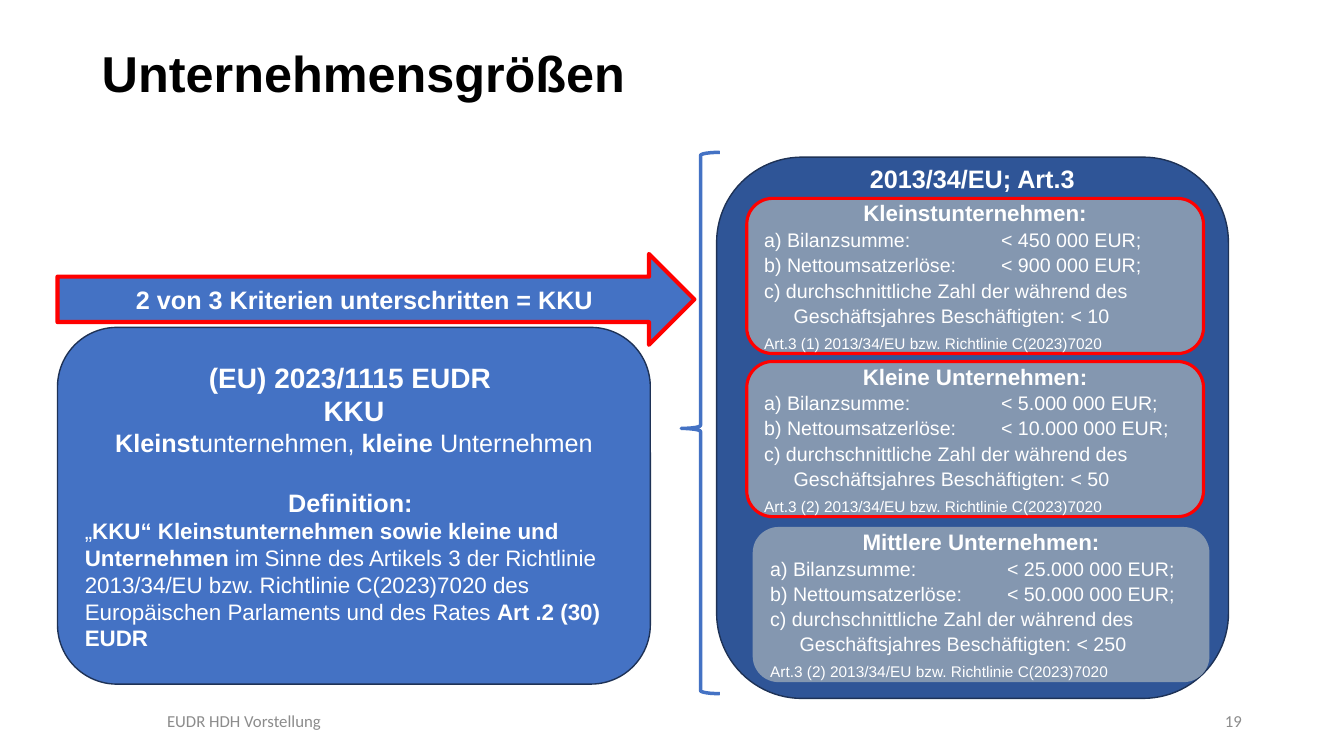
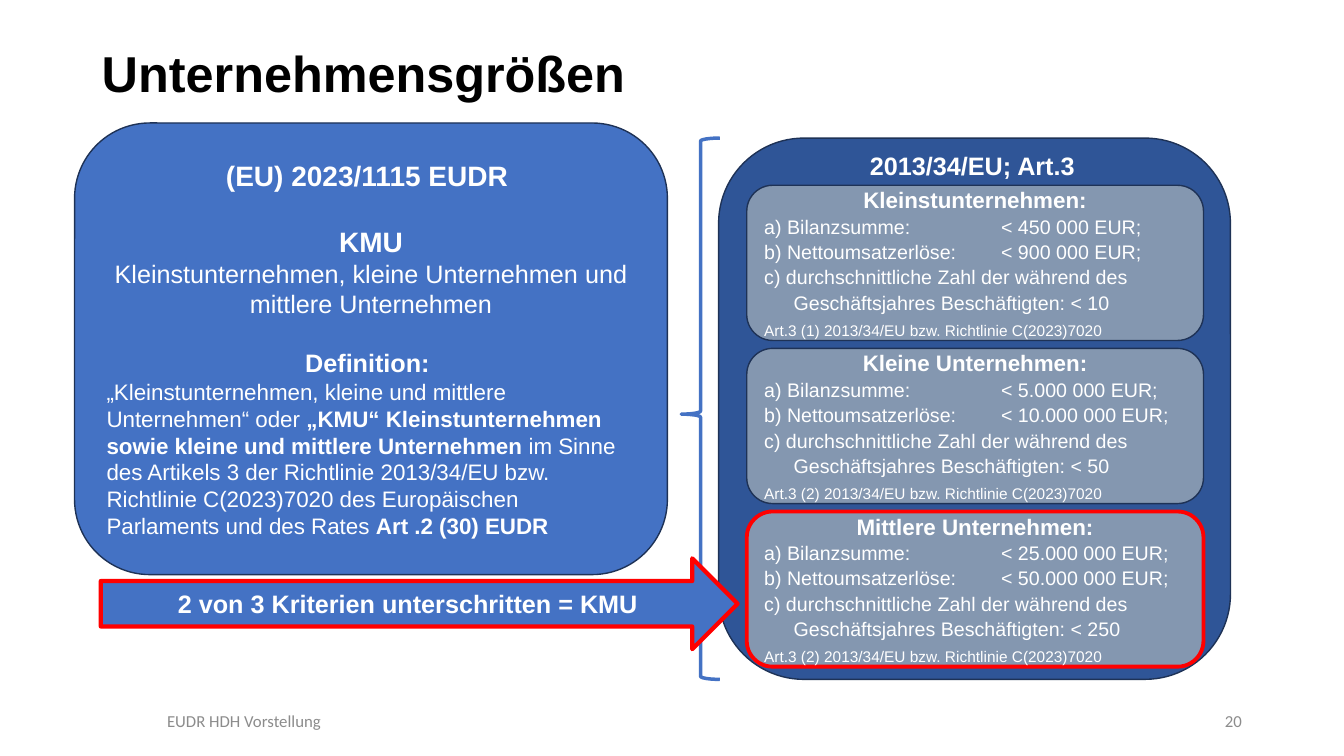
from dataclasses import dataclass

from lxml.etree import SubElement
from pptx import Presentation
from pptx.dml.color import RGBColor as Rgb
from pptx.enum.shapes import MSO_SHAPE as Preset
from pptx.enum.text import MSO_ANCHOR as Anchor, MSO_AUTO_SIZE as AutoSize, PP_ALIGN as Align
from pptx.oxml.ns import qn
from pptx.util import Cm, Pt


@dataclass(frozen=True)
class Theme:
    """Colours, fonts and type sizes of the presentation."""
    black: str = "000000"
    white: str = "FFFFFF"
    grey: str = "8C8C8C"
    blue: str = "4472C4"
    navy: str = "2F5597"
    outline: str = "1E3256"
    card: str = "8497B0"
    red: str = "FF0000"
    font: str = "Arial"
    footer_font: str = "Calibri"
    title: int = 36
    headline: int = 20
    lead: int = 18
    body: int = 16
    criteria: int = 14
    source: int = 11
    footer: int = 12


@dataclass(frozen=True)
class Box:
    """A rectangle in centimetres."""
    left: float
    top: float
    width: float
    height: float

    def shifted(self, right, down):
        """Return the same rectangle moved right and down."""
        return Box(self.left + right, self.top + down, self.width, self.height)

    def lengths(self):
        """Return left, top, width and height as lengths."""
        return [Cm(value) for value in (self.left, self.top, self.width, self.height)]


@dataclass(frozen=True)
class Edge:
    """Colour and width of an outline."""
    color: str
    width: float


THEME = Theme()
THIN = Edge(THEME.outline, 1)
TITLE_BOX = Box(2.31, 0.91, 29.21, 2.01)
FOOTER_BOX = Box(2.34, 17.65, 7.62, 1.02)
NUMBER_BOX = Box(28.12, 17.65, 3.43, 1.02)
CARD_PITCH = 4.11
TAB_STOP = Cm(5.97)
HANGING = Cm(0.74)

SIZE_CLASSES = [
    ("Kleinstunternehmen:", "450 000", "900 000", "10", "1"),
    ("Kleine Unternehmen:", "5.000 000", "10.000 000", "50", "2"),
    ("Mittlere Unternehmen:", "25.000 000", "50.000 000", "250", "2"),
]


def add_paragraph(frame, runs, align=Align.LEFT, before=0, color=THEME.white, font=THEME.font):
    """Add a paragraph made of (text, size, bold) runs."""
    paragraph = frame.paragraphs[0]
    if paragraph.runs:
        paragraph = frame.add_paragraph()
    paragraph.alignment = align
    paragraph.space_before = Pt(before)
    for text, size, bold in runs:
        run = paragraph.add_run()
        run.text = text
        run.font.name = font
        run.font.size = Pt(size)
        run.font.bold = bold
        run.font.color.rgb = Rgb.from_string(color)
    return paragraph


def add_preset(slide, preset, box, fill=None, edge=None):
    """Add a flat preset shape and return it."""
    shape = slide.shapes.add_shape(preset, *box.lengths())
    shape.shadow.inherit = False
    if fill:
        shape.fill.solid()
        shape.fill.fore_color.rgb = Rgb.from_string(fill)
    else:
        shape.fill.background()
    if edge:
        shape.line.color.rgb = Rgb.from_string(edge.color)
        shape.line.width = Pt(edge.width)
    else:
        shape.line.fill.background()
    shape.text_frame.word_wrap = True
    shape.text_frame.vertical_anchor = Anchor.MIDDLE
    return shape


def add_label(slide, box, text, size, bold=False, anchor=Anchor.MIDDLE, **style):
    """Add a text box with one line of text."""
    frame = slide.shapes.add_textbox(*box.lengths()).text_frame
    frame.word_wrap = True
    frame.vertical_anchor = anchor
    add_paragraph(frame, [(text, size, bold)], **style)


def add_frame(slide, number):
    """Fill the title and add the footer and the slide number."""
    title = slide.shapes.title
    title.left, title.top, title.width, title.height = TITLE_BOX.lengths()
    title.text_frame.auto_size = AutoSize.NONE
    title.text_frame.vertical_anchor = Anchor.MIDDLE
    heading = add_paragraph(title.text_frame, [("Unternehmensgrößen", THEME.title, True)],
                            color=THEME.black)
    heading.line_spacing = 0.9
    footer_style = {"color": THEME.grey, "font": THEME.footer_font}
    add_label(slide, FOOTER_BOX, "EUDR HDH Vorstellung", THEME.footer,
              align=Align.CENTER, **footer_style)
    add_label(slide, NUMBER_BOX, str(number), THEME.footer, align=Align.RIGHT, **footer_style)


def add_card(slide, box, size_class, edge):
    """Add one company size with its three criteria and its source."""
    name, balance, revenue, staff, section = size_class
    frame = add_preset(slide, Preset.ROUNDED_RECTANGLE, box, THEME.card, edge).text_frame
    add_paragraph(frame, [(name, THEME.body, True)], Align.CENTER)
    for criterion, limit in (("a) Bilanzsumme:", balance), ("b) Nettoumsatzerlöse:", revenue)):
        text = f"{criterion} \t< {limit} EUR;"
        paragraph = add_paragraph(frame, [(text, THEME.criteria, False)])
        paragraph.line_spacing = Pt(18)
        tabs = SubElement(paragraph._p.get_or_add_pPr(), qn("a:tabLst"))
        SubElement(tabs, qn("a:tab"), pos=str(TAB_STOP), algn="l")
    employees = ("c) durchschnittliche Zahl der während des "
                 f"Geschäftsjahres Beschäftigten: < {staff}")
    source = f"Art.3 ({section}) 2013/34/EU bzw. Richtlinie C(2023)7020"
    for text, size in ((employees, THEME.criteria), (source, THEME.source)):
        paragraph = add_paragraph(frame, [(text, size, False)])
        paragraph.line_spacing = Pt(18)
        properties = paragraph._p.get_or_add_pPr()
        properties.set("marL", str(HANGING))
        properties.set("indent", str(-HANGING))


def add_directive(slide, box, first_card, edges, last_shift=(0, 0)):
    """Add the directive panel with its heading and three stacked cards."""
    add_preset(slide, Preset.ROUNDED_RECTANGLE, box, THEME.navy, THIN)
    heading_box = Box(first_card.left + 2.85, first_card.top - 1.01, 5.82, 1.02)
    add_label(slide, heading_box, "2013/34/EU; Art.3", THEME.lead, True, Anchor.TOP)
    shifts = [(0, 0), (0, 0), last_shift]
    for index, (size_class, edge, (right, down)) in enumerate(zip(SIZE_CLASSES, edges, shifts)):
        card_box = first_card.shifted(right, index * CARD_PITCH + down)
        add_card(slide, card_box, size_class, edge)


def add_brace(slide, box):
    """Add the brace that opens towards the directive panel."""
    brace = add_preset(slide, Preset.LEFT_BRACE, box, edge=Edge(THEME.blue, 2.5))
    brace.adjustments[0] = 0.08
    brace.adjustments[1] = 0.51


def add_definition(slide, box, term, members, definition, term_gap=0):
    """Add the panel that defines a term of the regulation."""
    frame = add_preset(slide, Preset.ROUNDED_RECTANGLE, box, THEME.blue, THIN).text_frame
    add_paragraph(frame, [("(EU) 2023/1115 EUDR ", THEME.headline, True)], Align.CENTER)
    add_paragraph(frame, [(term, THEME.headline, True)], Align.CENTER, term_gap)
    add_paragraph(frame, [(text, THEME.lead, bold) for text, bold in members], Align.CENTER)
    add_paragraph(frame, [("Definition: ", THEME.lead, True)], Align.CENTER, 21)
    reference = [
        ("im Sinne des Artikels 3 der Richtlinie 2013/34/EU bzw. Richtlinie C(2023)7020 "
         "des Europäischen Parlaments und des Rates ", False),
        ("Art .2 (30) EUDR", True),
    ]
    add_paragraph(frame, [(text, THEME.body, bold) for text, bold in definition + reference])


def add_criteria_arrow(slide, box, term):
    """Add the arrow that states the rule for a term."""
    arrow = add_preset(slide, Preset.RIGHT_ARROW, box, THEME.blue, Edge(THEME.red, 3))
    text = f"2 von 3 Kriterien unterschritten = {term}"
    add_paragraph(arrow.text_frame, [(text, THEME.lead, True)], Align.CENTER)


def build_small_companies(slide):
    """Build the slide on micro and small companies."""
    add_frame(slide, 19)
    add_definition(
        slide, Box(1.45, 8.25, 14.94, 8.99), "KKU",
        [("Kleinst", True), ("unternehmen, ", False), ("kleine", True), (" Unternehmen", False)],
        [("„", False), ("KKU“ Kleinstunternehmen sowie kleine und Unternehmen ", True)])
    marked = Edge(THEME.red, 2.25)
    add_directive(slide, Box(18.06, 3.96, 12.9, 13.64), Box(18.82, 5, 11.51, 3.91),
                  [marked, marked, None], last_shift=(0.15, 0.06))
    add_brace(slide, Box(17.17, 3.84, 0.97, 13.64))
    add_criteria_arrow(slide, Box(1.45, 6.4, 16.05, 2.29), "KKU")


def build_medium_companies(slide):
    """Build the slide on micro, small and medium companies."""
    add_frame(slide, 20)
    add_definition(
        slide, Box(1.88, 3.1, 14.94, 11.38), "KMU",
        [("Kleinstunternehmen, kleine Unternehmen und mittlere Unternehmen", False)],
        [("„Kleinstunternehmen, kleine und mittlere Unternehmen“ oder ", False),
         ("„KMU“ Kleinstunternehmen sowie kleine und mittlere Unternehmen ", True)],
        term_gap=23)
    add_directive(slide, Box(18.11, 3.48, 12.9, 13.64), Box(18.82, 4.67, 11.51, 3.91),
                  [THIN, THIN, Edge(THEME.red, 2.75)])
    add_brace(slide, Box(17.17, 3.48, 0.97, 13.64))
    add_criteria_arrow(slide, Box(2.54, 14.07, 16.05, 2.29), "KMU")


def main():
    """Build and save the presentation."""
    presentation = Presentation()
    presentation.slide_width = Cm(33.87)
    presentation.slide_height = Cm(19.05)
    title_only = presentation.slide_layouts.get_by_name("Title Only")
    for build in (build_small_companies, build_medium_companies):
        build(presentation.slides.add_slide(title_only))
    presentation.save("out.pptx")


if __name__ == "__main__":
    main()
